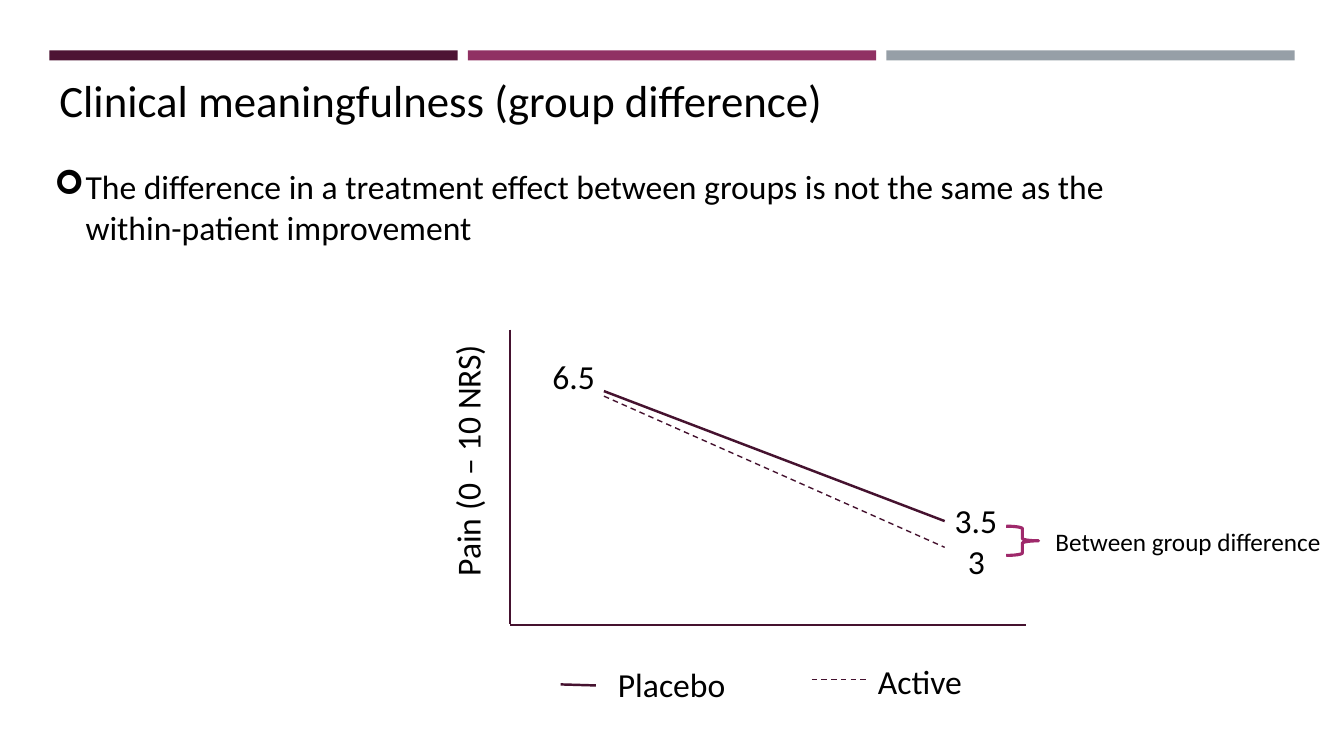
from dataclasses import dataclass

from lxml.etree import SubElement
from pptx import Presentation
from pptx.dml.color import RGBColor
from pptx.enum.dml import MSO_LINE
from pptx.enum.shapes import MSO_CONNECTOR, MSO_SHAPE
from pptx.enum.text import PP_ALIGN
from pptx.oxml.ns import qn
from pptx.util import Inches, Pt


@dataclass(frozen=True)
class Theme:
    font: str = "Calibri"
    title: int = 32
    body: int = 24
    small: int = 18
    text: RGBColor = RGBColor.from_string("000000")
    line: RGBColor = RGBColor.from_string("45122F")
    brace: RGBColor = RGBColor.from_string("9F296B")
    bars: tuple = ("4D1434", "903163", "969FA7")


theme = Theme()


def add_text(text, left, top, width, height, size=theme.body):
    box = page.shapes.add_textbox(Inches(left), Inches(top), Inches(width), Inches(height))
    box.text_frame.word_wrap = True
    para = box.text_frame.paragraphs[0]
    para.text = text
    para.font.name = theme.font
    para.font.size = Pt(size)
    para.font.color.rgb = theme.text
    return box


def add_line(start, end, weight=1, dashed=False):
    line = page.shapes.add_connector(
        MSO_CONNECTOR.STRAIGHT, *map(Inches, start), *map(Inches, end))
    line.line.color.rgb = theme.line
    line.line.width = Pt(weight)
    if dashed:
        line.line.dash_style = MSO_LINE.DASH
    SubElement(line._element.spPr, qn("a:effectLst"))


deck = Presentation()
deck.slide_width, deck.slide_height = Inches(13.33), Inches(7.5)
page = deck.slides.add_slide(deck.slide_layouts[6])

# Header: three equal bars and the title
for index, color in enumerate(theme.bars):
    bar = page.shapes.add_shape(
        MSO_SHAPE.RECTANGLE, Inches(0.49 + 4.15 * index), Inches(0.5), Inches(4.05), Inches(0.1))
    bar.shadow.inherit = False
    bar.fill.solid()
    bar.fill.fore_color.rgb = RGBColor.from_string(color)
    bar.line.fill.background()
add_text("Clinical meaningfulness (group difference)", 0.49, 0.67, 10.91, 0.64, theme.title)

# Bulleted statement
statement = add_text(
    "The difference in a treatment effect between groups is not the same as the "
    "within-patient improvement", 0.44, 1.6, 10.96, 0.91)
bullet = statement.text_frame.paragraphs[0]._p.get_or_add_pPr()
bullet.set("marL", str(Inches(0.31)))
bullet.set("indent", str(-Inches(0.31)))
bullet_font = bullet.makeelement(qn("a:buFont"), {"typeface": "Wingdings"})
bullet_char = bullet.makeelement(qn("a:buChar"), {"char": "➢"})
bullet.insert(0, bullet_font)
bullet.insert(1, bullet_char)

# Axes
add_line((5.06, 3.27), (5.06, 6.19))
add_line((5.06, 6.2), (10.18, 6.2))
axis_label = add_text("Pain (0 – 10 NRS)", 3.26, 4.32, 2.75, 0.5)
axis_label.rotation = 270
axis_label.text_frame.paragraphs[0].alignment = PP_ALIGN.CENTER

# Treatment lines with their values
add_line((5.99, 3.88), (9.37, 5.17), 1.75)
add_line((5.99, 3.93), (9.37, 5.43), dashed=True)
for value, left, top, width in [
    ("6.5", 5.38, 3.48, 0.71),
    ("3.5", 9.37, 4.91, 0.67),
    ("3", 9.5, 5.32, 0.42),
]:
    add_text(value, left, top, width, 0.5)

# Legend
add_line((5.56, 6.79), (5.91, 6.8), 1.75)
add_text("Placebo", 6.03, 6.54, 1.67, 0.5)
add_line((8.05, 6.74), (8.61, 6.74), dashed=True)
add_text("Active", 8.61, 6.51, 1.67, 0.5)

# Difference between the groups
brace = page.shapes.add_shape(
    MSO_SHAPE.RIGHT_BRACE, Inches(9.98), Inches(5.22), Inches(0.32), Inches(0.29))
brace.shadow.inherit = False
brace.fill.background()
brace.line.color.rgb = theme.brace
brace.line.width = Pt(2.25)
add_text("Between group difference", 10.37, 5.17, 2.95, 0.4, theme.small)

deck.save("out.pptx")
